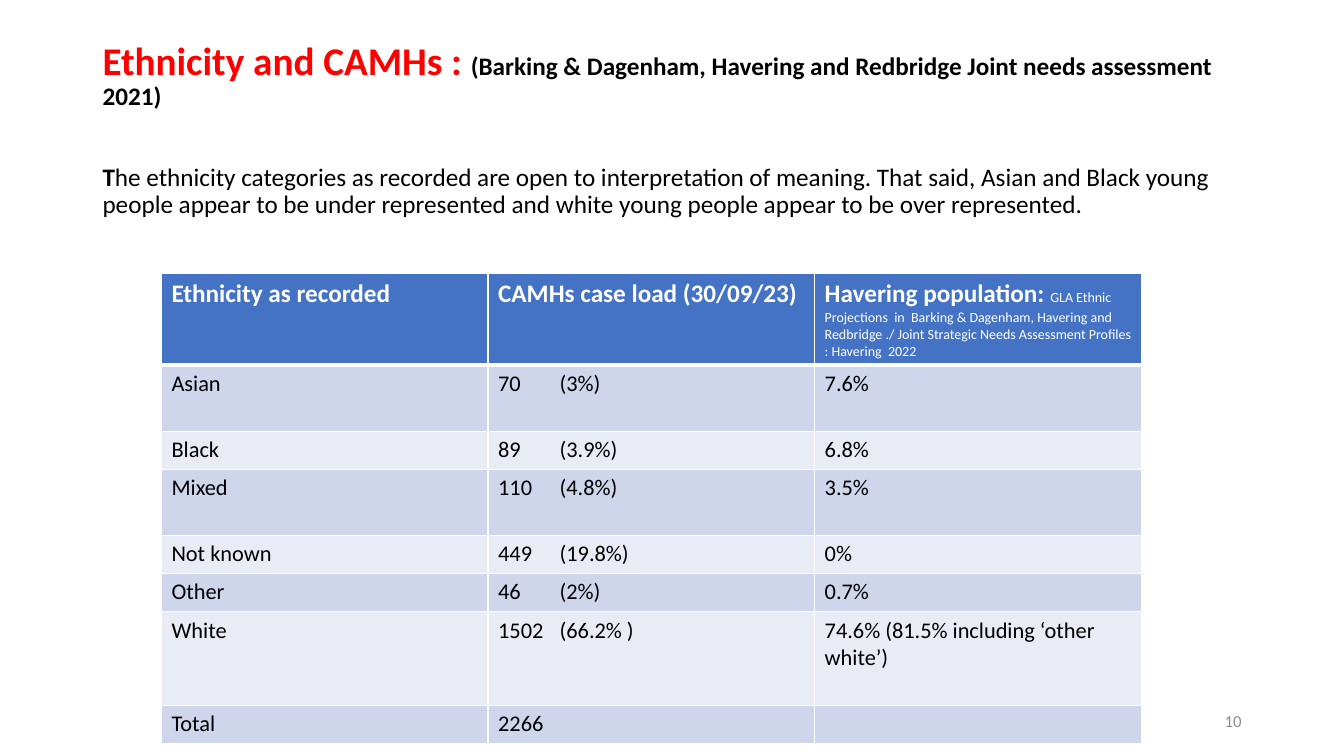
from dataclasses import dataclass

from lxml.etree import SubElement
from pptx import Presentation
from pptx.dml.color import RGBColor
from pptx.enum.text import MSO_ANCHOR, MSO_AUTO_SIZE, PP_ALIGN
from pptx.oxml.ns import qn
from pptx.util import Cm, Pt


@dataclass(frozen=True)
class Theme:
    font: str = "Calibri"
    red: str = "FF0000"
    black: str = "000000"
    white: str = "FFFFFF"
    grey: str = "8C8C8C"
    header: str = "4472C4"
    bands: tuple = ("CFD5EA", "E9EBF5")
    heading: int = 28
    lead: int = 18
    body: int = 16
    small: int = 12
    source: int = 10


theme = Theme()


def add_run(paragraph, text, size, color, bold=False):
    run = paragraph.add_run()
    run.text = text
    font_format = {"name": theme.font, "size": Pt(size), "bold": bold}
    for attribute, value in font_format.items():
        setattr(run.font, attribute, value)
    run.font.color.rgb = RGBColor.from_string(color)


def style_cell(cell, fill, bottom_width):
    # Borders come before the fill in the cell properties
    properties = cell._tc.get_or_add_tcPr()
    widths = {"lnL": 1, "lnR": 1, "lnT": 1, "lnB": bottom_width}
    for side, width in widths.items():
        line = SubElement(properties, qn(f"a:{side}"), w=str(Pt(width)))
        SubElement(SubElement(line, qn("a:solidFill")), qn("a:srgbClr"), val=theme.white)
    cell.fill.solid()
    cell.fill.fore_color.rgb = RGBColor.from_string(fill)


prs = Presentation()
prs.slide_width, prs.slide_height = Cm(33.87), Cm(19.05)
slide = prs.slides.add_slide(prs.slide_layouts[5])

# Title with its lead statement
title = slide.shapes.title
title_place = {"left": Cm(2.33), "top": Cm(0.92), "width": Cm(29.21), "height": Cm(5)}
for attribute, value in title_place.items():
    setattr(title, attribute, value)
title_frame = title.text_frame
frame_format = {
    "word_wrap": True,
    "auto_size": MSO_AUTO_SIZE.NONE,
    "vertical_anchor": MSO_ANCHOR.TOP,
}
for attribute, value in frame_format.items():
    setattr(title_frame, attribute, value)

heading = title_frame.paragraphs[0]
add_run(heading, "Ethnicity and CAMHs : ", theme.heading, theme.red, True)
add_run(
    heading,
    "(Barking & Dagenham, Havering and Redbridge Joint needs assessment 2021)",
    theme.lead, theme.black, True,
)
statement = title_frame.add_paragraph()
add_run(statement, "T", theme.lead, theme.black, True)
add_run(
    statement,
    "he ethnicity categories as recorded are open to interpretation of meaning. "
    "That said, Asian and Black young people appear to be under represented "
    "and white young people appear to be over represented.",
    theme.lead, theme.black,
)
for paragraph, space_before in ((heading, 0), (statement, 38)):
    paragraph_format = {
        "alignment": PP_ALIGN.LEFT,
        "line_spacing": 0.9,
        "space_before": Pt(space_before),
    }
    for attribute, value in paragraph_format.items():
        setattr(paragraph, attribute, value)

# Ethnicity table: row height in cm, then the three cells
headings = ("Ethnicity as recorded", "CAMHs case load (30/09/23)", "Havering population: ")
population_source = (
    "GLA Ethnic Projections  in  Barking & Dagenham, Havering and Redbridge ./ "
    "Joint Strategic Needs Assessment Profiles : Havering  2022"
)
ethnicities = (
    (1.67, "Asian", "70\t(3%)", "7.6%"),
    (0.96, "Black", "89\t(3.9%)", "6.8%"),
    (1.67, "Mixed", "110\t(4.8%)", "3.5%"),
    (0.96, "Not known", "449\t(19.8%)", "0%"),
    (0.96, "Other", "46\t(2%)", "0.7%"),
    (2.36, "White", "1502\t(66.2% )", "74.6% (81.5% including ‘other white’)"),
    (0.96, "Total", "2266", ""),
)
header_height, column_width = 2.28, 8.23
table_height = header_height + sum(row[0] for row in ethnicities)
table = slide.shapes.add_table(
    len(ethnicities) + 1, len(headings),
    Cm(4.07), Cm(6.88), Cm(column_width * len(headings)), Cm(table_height),
).table
for column in table.columns:
    column.width = Cm(column_width)

# Header row
table.rows[0].height = Cm(header_height)
for cell, text in zip(table.rows[0].cells, headings):
    style_cell(cell, theme.header, 3)
    add_run(cell.text_frame.paragraphs[0], text, theme.lead, theme.white, True)
add_run(
    table.cell(0, 2).text_frame.paragraphs[0],
    population_source, theme.source, theme.white,
)

# Banded body rows, with shares lined up on a tab stop
for index, (height, *texts) in enumerate(ethnicities):
    row = table.rows[index + 1]
    row.height = Cm(height)
    for cell, text in zip(row.cells, texts):
        style_cell(cell, theme.bands[index % 2], 1)
        paragraph = cell.text_frame.paragraphs[0]
        if "\t" in text:
            stops = SubElement(paragraph._p.get_or_add_pPr(), qn("a:tabLst"))
            SubElement(stops, qn("a:tab"), pos=str(Cm(1.55)), algn="l")
        add_run(paragraph, text, theme.body, theme.black)

# Page number
page_number = slide.shapes.add_textbox(Cm(23.92), Cm(17.66), Cm(7.62), Cm(1.01)).text_frame
page_number.word_wrap = True
page_number.vertical_anchor = MSO_ANCHOR.MIDDLE
page_number.paragraphs[0].alignment = PP_ALIGN.RIGHT
add_run(page_number.paragraphs[0], "10", theme.small, theme.grey)

prs.save("out.pptx")
